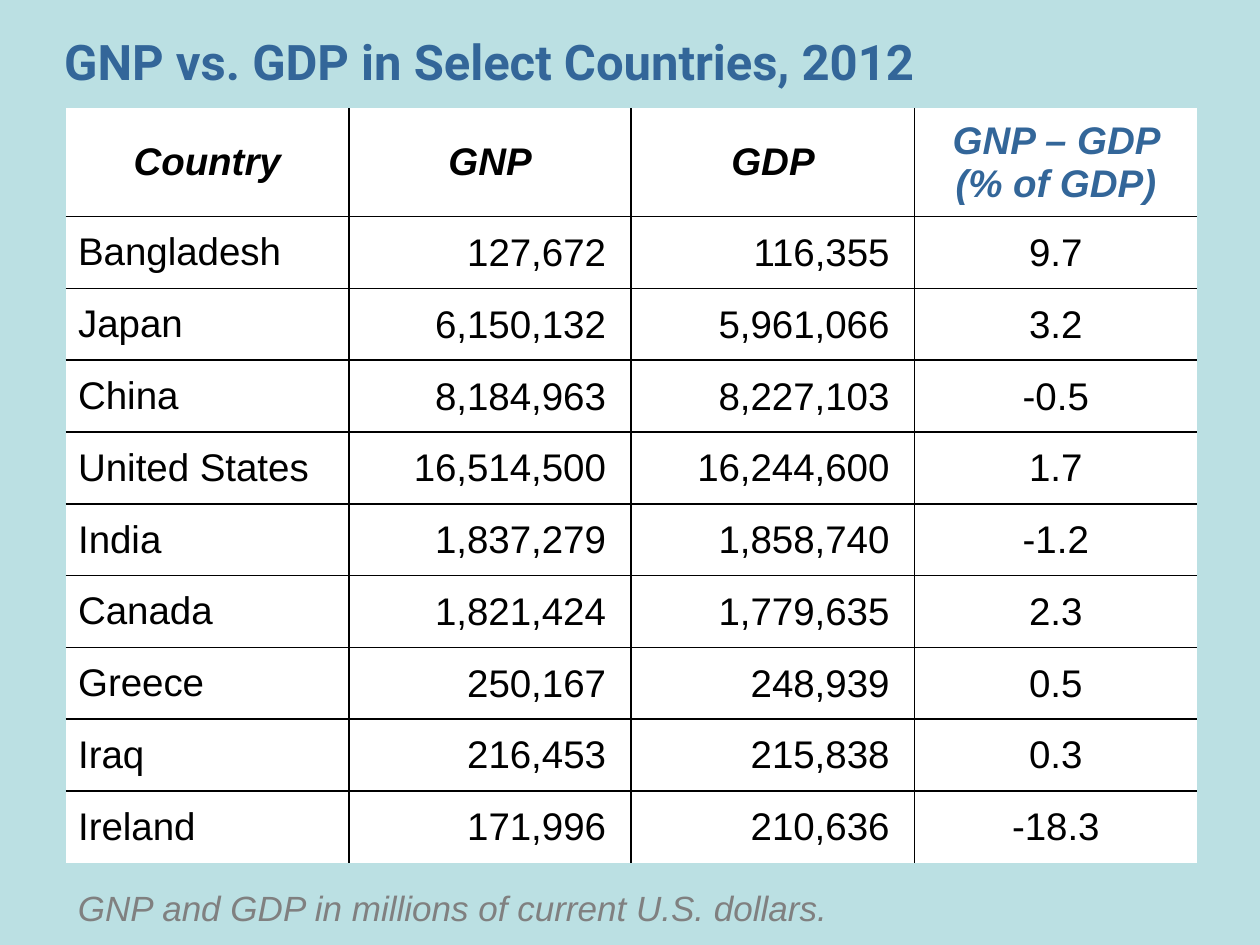
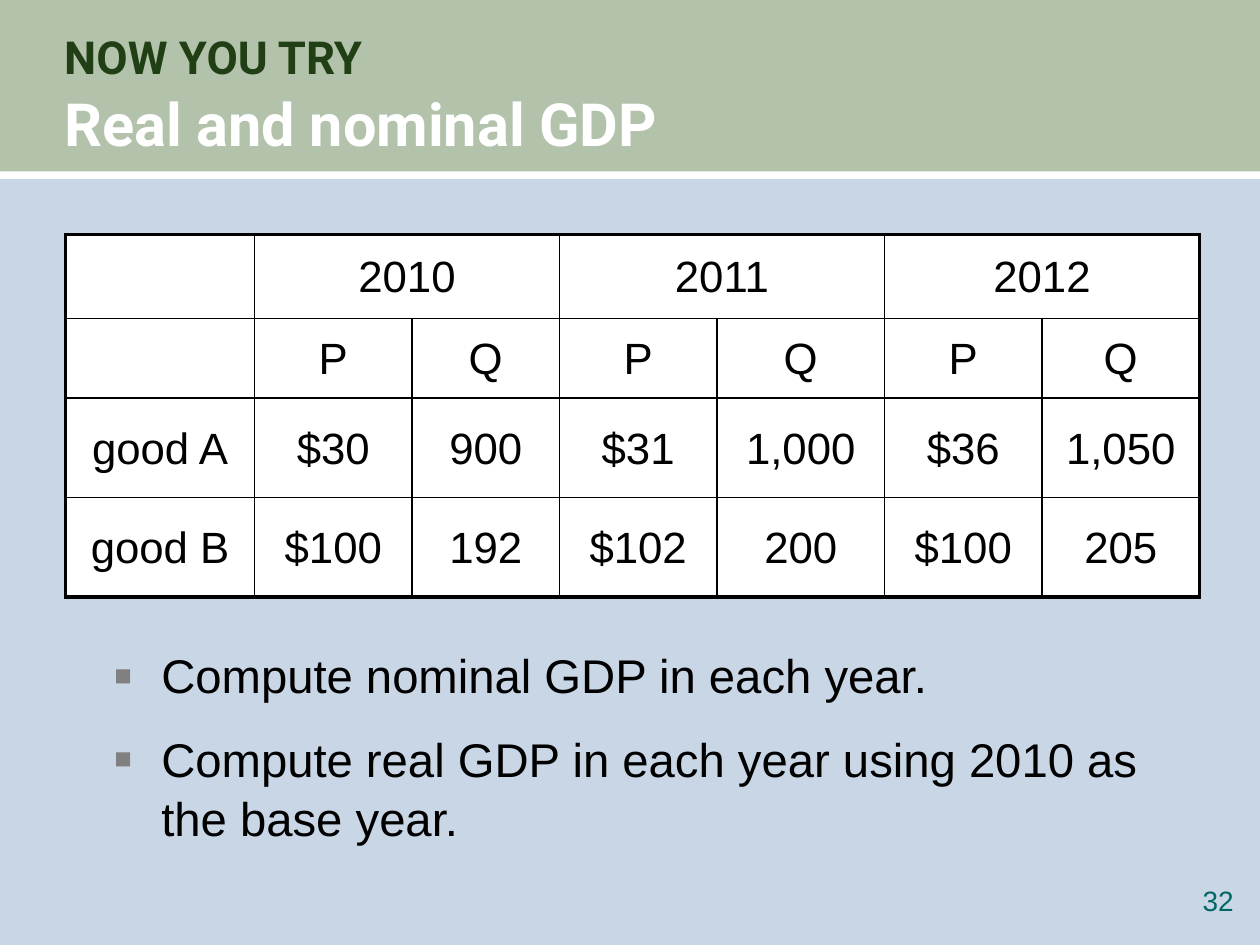
"""Build two slides on GNP, GDP and real versus nominal values."""
from copy import deepcopy
from dataclasses import dataclass
from typing import Optional

from lxml.etree import SubElement
from pptx import Presentation
from pptx.dml.color import RGBColor
from pptx.enum.shapes import MSO_SHAPE as SHAPE
from pptx.enum.text import MSO_ANCHOR as ANCHOR, MSO_AUTO_SIZE as AUTO, PP_ALIGN as ALIGN
from pptx.oxml.ns import qn
from pptx.util import Emu, Pt

PX = 9144
BLACK, WHITE, GREY = "000000", "FFFFFF", "808080"
BLUE, GREEN, TEAL = "336699", "203F15", "006666"
AQUA, PALE_BLUE, SAGE = "BBE0E3", "C9D6E5", "B3C2AA"


@dataclass(frozen=True)
class Box:
    left: int
    top: int
    width: int
    height: int

    def emu(self) -> list[Emu]:
        return [px(n) for n in (self.left, self.top, self.width, self.height)]


@dataclass(frozen=True)
class Font:
    size: int
    color: str = BLACK
    bold: bool = False
    italic: bool = False
    name: str = "Arial"


@dataclass(frozen=True)
class CellStyle:
    font: Font
    align: ALIGN = ALIGN.CENTER
    margins: tuple[int, int, int, int] = (10, 5, 10, 5)
    line_spacing: Optional[float] = None
    before: int = 0


HEADER = CellStyle(Font(22, bold=True, italic=True))
BLUE_HEADER = CellStyle(Font(22, BLUE, True, True))
NAME = CellStyle(Font(22), ALIGN.LEFT)
AMOUNT = CellStyle(Font(22), ALIGN.RIGHT, (1, 1, 20, 0))
PERCENT = CellStyle(Font(22), margins=(1, 1, 1, 0))
PRICE = CellStyle(Font(25), line_spacing=1.05, before=45)

COUNTRIES = [
    ("Country", "GNP", "GDP", "GNP – GDP (% of GDP)"),
    ("Bangladesh", "127,672", "116,355", "9.7"),
    ("Japan", "6,150,132", "5,961,066", "3.2"),
    ("China", "8,184,963", "8,227,103", "-0.5"),
    ("United States", "16,514,500", "16,244,600", "1.7"),
    ("India", "1,837,279", "1,858,740", "-1.2"),
    ("Canada", "1,821,424", "1,779,635", "2.3"),
    ("Greece", "250,167", "248,939", "0.5"),
    ("Iraq", "216,453", "215,838", "0.3"),
    ("Ireland", "171,996", "210,636", "-18.3"),
]
GOODS = [
    ("", "2010", "", "2011", "", "2012", ""),
    ("", "P", "Q", "P", "Q", "P", "Q"),
    ("good A", "$30", "900", "$31", "1,000", "$36", "1,050"),
    ("good B", "$100", "192", "$102", "200", "$100", "205"),
]
TASKS = [
    "Compute nominal GDP in each year.",
    "Compute real GDP in each year using 2010 as the base year.",
]


def px(n: int) -> Emu:
    return Emu(n * PX)


def rgb(color: str) -> RGBColor:
    return RGBColor.from_string(color)


def set_font(r, font: Font) -> None:
    r.font.name, r.font.size = font.name, Pt(font.size)
    r.font.bold, r.font.italic = font.bold, font.italic
    r.font.color.rgb = rgb(font.color)


def set_margins(obj, margins: tuple[int, int, int, int]) -> None:
    sides = ("left", "top", "right", "bottom")
    for side, margin in zip(sides, margins):
        setattr(obj, f"margin_{side}", px(margin))


def space_before(p, percent: int) -> None:
    p.space_before = Pt(0)
    spacing = p._p.pPr.find(qn("a:spcBef"))
    spacing.remove(spacing[0])
    SubElement(spacing, qn("a:spcPct"), val=str(percent * 1000))


def new_slide(prs, layout: int, background: str):
    s = prs.slides.add_slide(prs.slide_layouts[layout])
    s.background.fill.solid()
    s.background.fill.fore_color.rgb = rgb(background)
    return s


def place(sp, box: Box) -> None:
    sp.left, sp.top, sp.width, sp.height = box.emu()


def set_title(s, text: str, box: Box, fonts: list[Font]) -> None:
    sp = s.shapes.title
    place(sp, box)
    tf = sp.text_frame
    tf.text = text
    tf.auto_size, tf.vertical_anchor = AUTO.NONE, ANCHOR.MIDDLE
    set_margins(tf, (0, 0, 0, 0))
    p = tf.paragraphs[0]
    p.alignment, p.line_spacing = ALIGN.LEFT, 1.05
    for r, font in zip(p.runs, fonts):
        set_font(r, font)
    for br in p._p.findall(qn("a:br")):
        br.append(deepcopy(br.getprevious().find(qn("a:rPr"))))


def add_band(s, box: Box, color: str):
    sp = s.shapes.add_shape(SHAPE.RECTANGLE, *box.emu())
    sp.shadow.inherit = False
    sp.fill.solid()
    sp.fill.fore_color.rgb = rgb(color)
    sp.line.fill.background()
    return sp


def add_text(s, text: str, box: Box, font: Font, align: ALIGN = ALIGN.LEFT,
             margins: tuple[int, int, int, int] = (10, 5, 10, 5)) -> None:
    tf = s.shapes.add_textbox(*box.emu()).text_frame
    tf.word_wrap = True
    set_margins(tf, margins)
    tf.text = text
    p = tf.paragraphs[0]
    p.alignment = align
    set_font(p.runs[0], font)


def set_bullets(sp, items: list[str], box: Box, font: Font) -> None:
    place(sp, box)
    tf = sp.text_frame
    tf.text = "\n".join(items)
    tf.auto_size = AUTO.NONE
    for p in tf.paragraphs:
        p.line_spacing = 1.05
        space_before(p, 50)
        set_font(p.runs[0], font)
        pPr = p._p.pPr
        pPr.set("marL", str(px(38)))
        pPr.set("indent", str(px(-38)))
        SubElement(SubElement(pPr, qn("a:buClr")), qn("a:srgbClr"), val=GREY)
        SubElement(pPr, qn("a:buSzPct"), val="120000")
        SubElement(pPr, qn("a:buFont"), typeface="Arial")
        SubElement(pPr, qn("a:buChar"), char="▪")


def set_border(cell, side: str, width: float) -> None:
    ln = SubElement(cell._tc.get_or_add_tcPr(), qn(f"a:ln{side}"), w=str(Pt(width)))
    if width:
        SubElement(SubElement(ln, qn("a:solidFill")), qn("a:srgbClr"), val=BLACK)
    else:
        SubElement(ln, qn("a:noFill"))


def style_cell(cell, text: str, style: CellStyle) -> None:
    cell.fill.solid()
    cell.fill.fore_color.rgb = rgb(WHITE)
    cell.vertical_anchor = ANCHOR.MIDDLE
    set_margins(cell, style.margins)
    if not text:
        return
    cell.text_frame.text = text
    p = cell.text_frame.paragraphs[0]
    p.alignment = style.align
    if style.line_spacing:
        p.line_spacing = style.line_spacing
        space_before(p, style.before)
    set_font(p.runs[0], style.font)


def add_grid(s, left: int, top: int, cols: list[int], rows: list[int],
             texts: list[tuple[str, ...]], head: list[CellStyle],
             body: list[CellStyle], outer: float, pair_heads: bool = False) -> None:
    box = Box(left, top, sum(cols), sum(rows))
    table = s.shapes.add_table(len(rows), len(cols), *box.emu()).table
    table.first_row = table.horz_banding = False
    for col, width in zip(table.columns, cols):
        col.width = px(width)
    for row, height in zip(table.rows, rows):
        row.height = px(height)
    if pair_heads:
        for c in range(1, len(cols), 2):
            table.cell(0, c).merge(table.cell(0, c + 1))
    for i, row in enumerate(texts):
        for j, text in enumerate(row):
            cell = table.cell(i, j)
            end = j + (cell.span_width if cell.is_merge_origin else 1)
            edges = {"L": j == 0, "R": end == len(cols),
                     "T": i == 0, "B": i == len(rows) - 1}
            for side, is_outer in edges.items():
                set_border(cell, side, outer if is_outer else 1)
            style_cell(cell, text, (body if i else head)[j])


def build_countries(prs) -> None:
    s = new_slide(prs, 5, AQUA)
    set_title(s, "GNP vs. GDP in Select Countries, 2012", Box(51, 17, 902, 61),
              [Font(28, BLUE, True, name="Roboto")])
    add_grid(s, 52, 86, [225, 224, 225, 224], [86] + [57] * 9, COUNTRIES,
             [HEADER] * 3 + [BLUE_HEADER], [NAME, AMOUNT, AMOUNT, PERCENT], 0)
    add_text(s, "GNP and GDP in millions of current U.S. dollars.",
             Box(52, 699, 821, 44), Font(20, GREY, italic=True))


def build_exercise(prs) -> None:
    s = new_slide(prs, 1, PALE_BLUE)
    band = add_band(s, Box(0, -1, 1000, 141), SAGE)
    s.shapes.title.element.addprevious(band.element)
    set_title(s, "NOW YOU TRY\vReal and nominal GDP", Box(51, 22, 902, 103),
              [Font(26, GREEN, True, name="Roboto"), Font(34, WHITE, True, name="Roboto")])
    add_band(s, Box(0, 136, 1000, 6), WHITE)
    add_text(s, "32", Box(924, 701, 55, 32), Font(16, TEAL), ALIGN.RIGHT, (0, 0, 0, 0))
    set_bullets(s.placeholders[1], TASKS, Box(80, 506, 864, 203), Font(27))
    add_grid(s, 52, 186, [150, 125, 117, 125, 133, 125, 125], [67, 63, 79, 79],
             GOODS, [PRICE] * 7, [PRICE] * 7, 2.25, pair_heads=True)


def main() -> None:
    prs = Presentation()
    prs.slide_width, prs.slide_height = px(1000), px(750)
    build_countries(prs)
    build_exercise(prs)
    prs.save("out.pptx")


if __name__ == "__main__":
    main()
